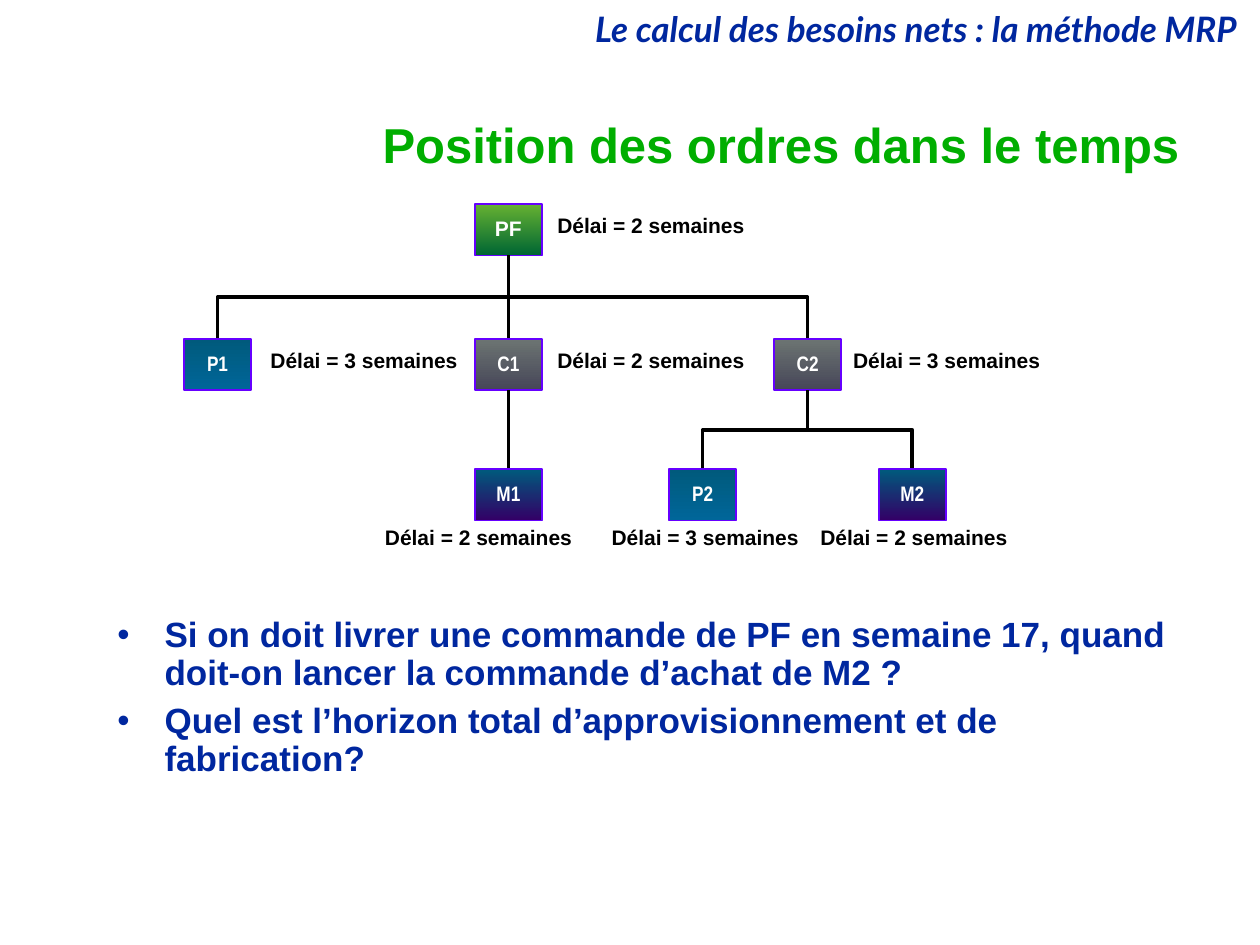
import pptx
import pptx.util
import pptx.dml.color
import pptx.enum.shapes
import pptx.enum.text
import pptx.oxml.ns
import lxml.etree

Pt = pptx.util.Pt
RGB = pptx.dml.color.RGBColor
ALIGN = pptx.enum.text.PP_ALIGN
ANCHOR = pptx.enum.text.MSO_ANCHOR
LINK = pptx.enum.shapes.MSO_CONNECTOR
qn = pptx.oxml.ns.qn

NAVY = RGB(0x00, 0x27, 0x9F)
GREEN = RGB(0x00, 0xAE, 0x00)
BLACK = RGB(0x00, 0x00, 0x00)
WHITE = RGB(0xFF, 0xFF, 0xFF)
VIOLET = RGB(0x66, 0x00, 0xFF)
# Gradients, top to bottom, by kind of item
FINAL = (RGB(0x66, 0xB1, 0x32), RGB(0x00, 0x66, 0x33))
PART = (RGB(0x00, 0x5A, 0x7C), RGB(0x00, 0x66, 0x99))
UNIT = (RGB(0x6C, 0x74, 0x72), RGB(0x46, 0x46, 0x58))
STOCK = (RGB(0x00, 0x5A, 0x7C), RGB(0x33, 0x00, 0x66))

TILE_W, TILE_H = 38.4, 29.2
LABEL_W, LABEL_H = 122.4, 20
ROWS = (0, 77, 151.4)
SIDE, BELOW = 3, 29.5

# name: parent, row, left, gradient, weeks, label offset from the tile
ITEMS = {
    "PF": (None, 0, 166.2, FINAL, 2, (39.5, SIDE)),
    "P1": ("PF", 1, 0, PART, 3, (41.8, SIDE)),
    "C1": ("PF", 1, 166.2, UNIT, 2, (39.5, SIDE)),
    "C2": ("PF", 1, 337.2, UNIT, 3, (37.5, SIDE)),
    "M1": ("C1", 2, 166.2, STOCK, 2, (-59, BELOW)),
    "P2": ("C2", 2, 277.2, PART, 3, (-40.5, BELOW)),
    "M2": ("C2", 2, 397, STOCK, 2, (-41, BELOW)),
}


def style(para, size, color, align, face="Arial"):
    para.alignment = align
    para.line_spacing = 0.9
    font = para.font
    font.name, font.size, font.bold = face, Pt(size), True
    font.color.rgb = color


def place(shape, box):
    shape.left, shape.top, shape.width, shape.height = map(Pt, box)


def add_head(slide, box):
    frame = slide.shapes.add_textbox(*map(Pt, box)).text_frame
    frame.word_wrap = True
    para = frame.paragraphs[0]
    para.text = "Le calcul des besoins nets : la méthode MRP"
    style(para, 20, NAVY, ALIGN.RIGHT, "Lato")
    para.font.italic = True


def add_title(slide, box):
    title = slide.shapes.title
    place(title, box)
    frame = title.text_frame
    frame.auto_size = pptx.enum.text.MSO_AUTO_SIZE.NONE
    frame.vertical_anchor = ANCHOR.MIDDLE
    frame.text = "Position des ordres dans le temps"
    style(frame.paragraphs[0], 28, GREEN, ALIGN.RIGHT)


def add_list(slide, box):
    body = slide.placeholders[1]
    place(body, box)
    frame = body.text_frame
    frame.auto_size = pptx.enum.text.MSO_AUTO_SIZE.NONE
    frame.text = (
        "Si on doit livrer une commande de PF en semaine 17, "
        "quand doit-on lancer la commande d’achat de M2 ?\n"
        "Quel est l’horizon total d’approvisionnement et de fabrication?"
    )
    for para in frame.paragraphs:
        style(para, 20, NAVY, ALIGN.LEFT)
        para.space_before = Pt(6)
        props = para._p.get_or_add_pPr()
        props.set("marL", str(Pt(27)))
        props.set("indent", str(Pt(-27)))
        lxml.etree.SubElement(props, qn("a:buChar")).set("char", "•")


def add_tile(slide, name, left, top, shades):
    tile = slide.shapes.add_shape(
        pptx.enum.shapes.MSO_SHAPE.RECTANGLE,
        Pt(left), Pt(top), Pt(TILE_W), Pt(TILE_H))
    tile.shadow.inherit = False
    tile.fill.gradient()
    tile.fill.gradient_angle = 270
    for stop, shade in zip(tile.fill.gradient_stops, shades):
        stop.color.rgb = shade
    tile.line.color.rgb = VIOLET
    tile.line.width = Pt(1)
    frame = tile.text_frame
    frame.margin_left = frame.margin_right = 0
    frame.margin_top = frame.margin_bottom = 0
    frame.vertical_anchor = ANCHOR.MIDDLE
    frame.text = name
    face = "Arial" if name == "PF" else "Arial Narrow"
    style(frame.paragraphs[0], 12, WHITE, ALIGN.CENTER, face)


def add_label(slide, weeks, left, top):
    box = slide.shapes.add_textbox(Pt(left), Pt(top), Pt(LABEL_W), Pt(LABEL_H))
    frame = box.text_frame
    frame.word_wrap = False
    frame.text = f"Délai = {weeks} semaines"
    style(frame.paragraphs[0], 12, BLACK, ALIGN.CENTER)


def add_link(slide, x1, y1, x2, y2):
    """Join two points: straight down, or down, across and down."""
    if x1 == x2:
        kind, ends, turn = LINK.STRAIGHT, (x1, y1, x2, y2), 0
    else:
        # An elbow leaves sideways, so it is laid flat and then turned
        kind = LINK.ELBOW
        turn = 90 if x2 < x1 else 270
        midx, midy = (x1 + x2) / 2, (y1 + y2) / 2
        dx, dy = abs(x2 - x1) / 2, (y2 - y1) / 2
        if turn == 270:
            dy = -dy
        ends = (midx - dy, midy - dx, midx + dy, midy + dx)
    link = slide.shapes.add_connector(kind, *map(Pt, ends))
    link.line.color.rgb = BLACK
    link.line.width = Pt(2)
    props = link._element.spPr
    if turn:
        props.find(qn("a:xfrm")).set("rot", str(turn * 60000))
    lxml.etree.SubElement(props, qn("a:effectLst"))


def add_tree(slide, left, top):
    spots = {name: (left + item[2], top + ROWS[item[1]])
             for name, item in ITEMS.items()}
    half = TILE_W / 2
    for name, (above, _, _, shades, weeks, shift) in ITEMS.items():
        x, y = spots[name]
        if above:
            px, py = spots[above]
            add_link(slide, px + half, py + TILE_H, x + half, y)
        add_tile(slide, name, x, y, shades)
        add_label(slide, weeks, x + shift[0], y + shift[1])


def main():
    deck = pptx.Presentation()
    deck.slide_width, deck.slide_height = Pt(720), Pt(540)
    slide = deck.slides.add_slide(deck.slide_layouts[1])
    add_head(slide, (0, 3.6, 714.2, 28.8))
    add_title(slide, (110.9, 66.2, 570.2, 36))
    add_list(slide, (59.8, 349.2, 635.8, 141.8))
    add_tree(slide, 105.1, 116.8)
    deck.save("out.pptx")


if __name__ == "__main__":
    main()
